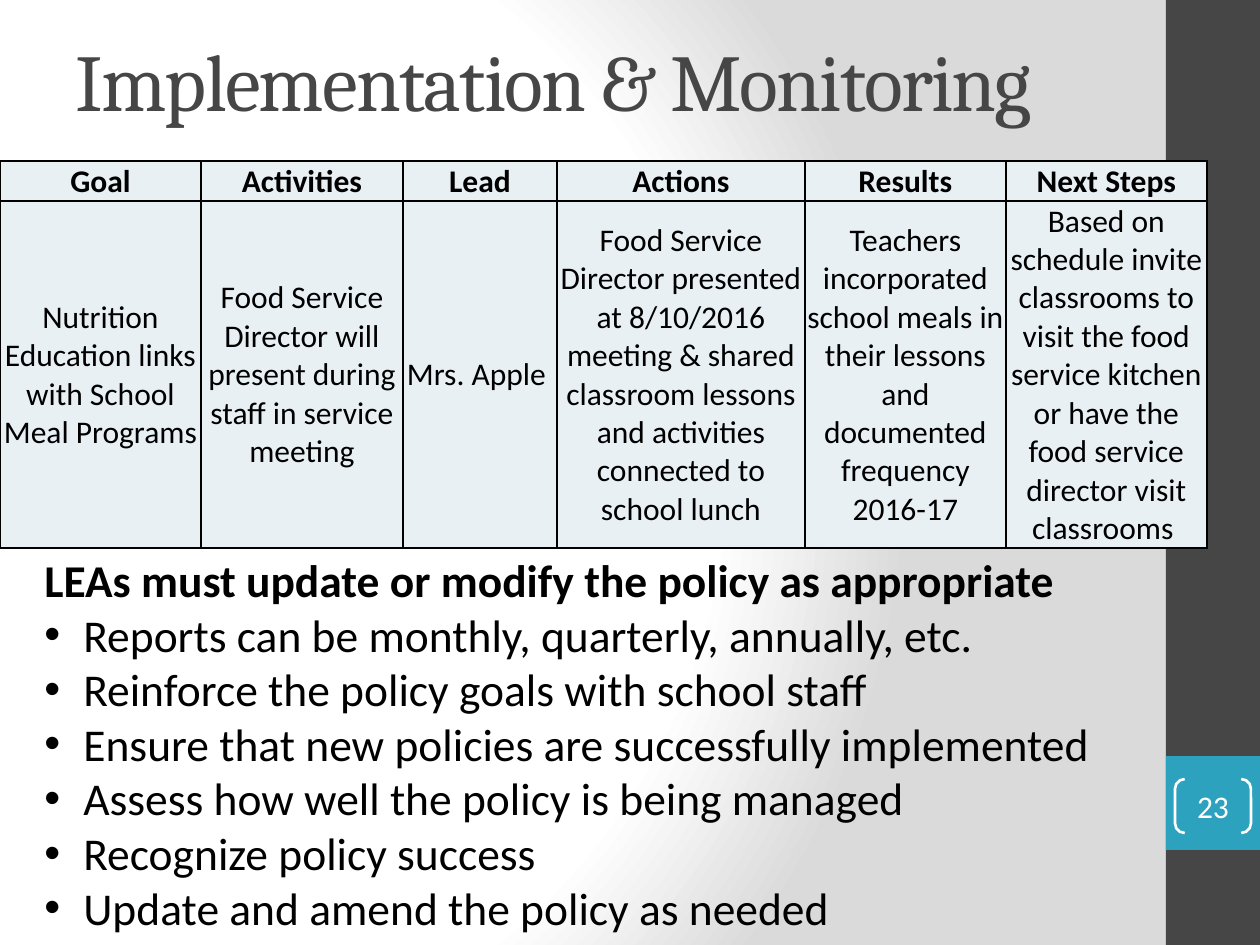
from lxml import etree
from pptx import Presentation
from pptx.dml.color import RGBColor
from pptx.enum.shapes import MSO_SHAPE as Shape
from pptx.enum.text import MSO_ANCHOR as Anchor, PP_ALIGN as Align
from pptx.oxml import parse_xml
from pptx.oxml.ns import nsdecls, qn
from pptx.util import Emu, Pt

EMU_PER_PX = 914400 / 126
BLACK = RGBColor(0x00, 0x00, 0x00)
WHITE = RGBColor(0xFF, 0xFF, 0xFF)
CHARCOAL = RGBColor(0x46, 0x46, 0x46)
TEAL = RGBColor(0x2D, 0xA2, 0xBF)
PALE_BLUE = RGBColor(0xE8, 0xF0, 0xF4)

COLUMN_WIDTHS = [201, 202, 154, 248, 201, 201]
ROW_HEIGHTS = [40, 347]
PLAN = [
    ["Goal", "Activities", "Lead", "Actions", "Results", "Next Steps"],
    [
        "Nutrition Education links with School Meal Programs",
        "Food Service Director will present during staff in service meeting",
        "Mrs. Apple ",
        "Food Service Director presented at 8/10/2016 meeting & shared "
        "classroom lessons and activities connected to school lunch",
        "Teachers incorporated school meals in their lessons and "
        "documented frequency 2016-17",
        "Based on schedule invite classrooms to visit the food service kitchen "
        "or have the food service director visit classrooms ",
    ],
]
POLICY_HEADING = "LEAs must update or modify the policy as appropriate"
POLICY_STEPS = [
    "Reports can be monthly, quarterly, annually, etc.",
    "Reinforce the policy goals with school staff",
    "Ensure that new policies are successfully implemented",
    "Assess how well the policy is being managed",
    "Recognize policy success",
    "Update and amend the policy as needed",
]


def px(length):
    """Turn pixels into EMU."""
    return Emu(round(length * EMU_PER_PX))


def box_px(*lengths):
    """Turn a left, top, width, height box into EMU."""
    return [px(length) for length in lengths]


def write(paragraph, words, size, color=BLACK, bold=False, face="Calibri"):
    """Set the words of a paragraph and format them."""
    paragraph.text = words
    for run in paragraph.runs:
        run.font.name = face
        run.font.size = Pt(size)
        run.font.bold = bold
        run.font.color.rgb = color


def set_insets(holder, left, top, right, bottom):
    """Set the inner margins of a text frame or table cell."""
    holder.margin_left, holder.margin_top = px(left), px(top)
    holder.margin_right, holder.margin_bottom = px(right), px(bottom)


def paint_background(slide):
    """Fill the slide with a radial white to grey gradient."""
    slide.element.cSld.insert(0, parse_xml(
        f'<p:bg {nsdecls("p", "a")}><p:bgPr><a:gradFill rotWithShape="1"><a:gsLst>'
        '<a:gs pos="0"><a:srgbClr val="FFFFFF"/></a:gs>'
        '<a:gs pos="75000"><a:srgbClr val="FFFFFF"/></a:gs>'
        '<a:gs pos="100000"><a:srgbClr val="DADADA"/></a:gs></a:gsLst>'
        '<a:path path="circle"><a:fillToRect l="20000" t="50000" r="100000" b="50000"/>'
        '</a:path></a:gradFill><a:effectLst/></p:bgPr></p:bg>'))


def add_block(slide, left, top, width, height, color):
    """Add a plain filled rectangle."""
    block = slide.shapes.add_shape(Shape.RECTANGLE, *box_px(left, top, width, height))
    block.shadow.inherit = False
    block.fill.solid()
    block.fill.fore_color.rgb = color
    block.line.fill.background()


def add_sidebar(slide, left, top, width, height):
    """Add the dark side band with its teal square."""
    add_block(slide, left, top, width, height, CHARCOAL)
    add_block(slide, left, top + 756, width, width, TEAL)


def add_page_number(slide, left, top, width, height):
    """Add the bracketed page number."""
    brackets = slide.shapes.add_shape(Shape.DOUBLE_BRACKET, *box_px(left, top, width, height))
    brackets.shadow.inherit = False
    brackets.adjustments[0] = 0.18
    brackets.fill.background()
    brackets.line.color.rgb = WHITE
    brackets.line.width = Pt(1.5)
    frame = brackets.text_frame
    frame.vertical_anchor = Anchor.MIDDLE
    set_insets(frame, 0, 0, 0, 0)
    number = frame.paragraphs[0]
    write(number, "23", 18, WHITE)
    number.alignment = Align.CENTER


def add_title(slide, left, top, width, height):
    """Add the slide title with tightened letters."""
    frame = slide.shapes.add_textbox(*box_px(left, top, width, height)).text_frame
    frame.word_wrap = True
    frame.vertical_anchor = Anchor.MIDDLE
    title = frame.paragraphs[0]
    write(title, "Implementation & Monitoring", 46, CHARCOAL, face="Cambria")
    title.runs[0].font._element.set("spc", "-100")


def add_borders(cell):
    """Draw a thin black border on each side of a cell."""
    properties = cell._tc.get_or_add_tcPr()
    for position, side in enumerate(["lnL", "lnR", "lnT", "lnB"]):
        properties.insert(position, parse_xml(
            f'<a:{side} {nsdecls("a")} w="12700"><a:solidFill>'
            f'<a:srgbClr val="{BLACK}"/></a:solidFill></a:{side}>'))


def add_plan_table(slide, left, top):
    """Add the table of the goal and its follow-up."""
    box = box_px(left, top, sum(COLUMN_WIDTHS), sum(ROW_HEIGHTS))
    table = slide.shapes.add_table(len(PLAN), len(COLUMN_WIDTHS), *box).table
    table.horz_banding = False
    for column, width in zip(table.columns, COLUMN_WIDTHS):
        column.width = px(width)
    for index, (row, height) in enumerate(zip(table.rows, ROW_HEIGHTS)):
        row.height = px(height)
        for cell, words in zip(row.cells, PLAN[index]):
            cell.fill.solid()
            cell.fill.fore_color.rgb = PALE_BLUE
            cell.vertical_anchor = Anchor.MIDDLE
            set_insets(cell, 1, 1, 1, 0)
            entry = cell.text_frame.paragraphs[0]
            write(entry, words, 18, bold=index == 0)
            entry.alignment = Align.CENTER
            add_borders(cell)


def add_bullet(paragraph, indent):
    """Give a paragraph a bullet with a hanging indent."""
    properties = paragraph._p.get_or_add_pPr()
    properties.set("marL", str(px(indent)))
    properties.set("indent", str(-px(indent)))
    etree.SubElement(properties, qn("a:buFont"), typeface="Arial")
    etree.SubElement(properties, qn("a:buChar"), char="•")


def add_policy_list(slide, left, top, width, height):
    """Add the policy heading and its bulleted steps."""
    frame = slide.shapes.add_textbox(*box_px(left, top, width, height)).text_frame
    frame.word_wrap = True
    write(frame.paragraphs[0], POLICY_HEADING, 26, bold=True)
    for words in POLICY_STEPS:
        step = frame.add_paragraph()
        write(step, words, 26)
        add_bullet(step, 39)


def main():
    """Build and save the slide."""
    deck = Presentation()
    deck.slide_width, deck.slide_height = px(1260), px(945)
    slide = deck.slides.add_slide(deck.slide_layouts[6])
    paint_background(slide)
    add_sidebar(slide, 1166, 0, 94, 945)
    add_title(slide, 63, 0, 1050, 158)
    add_plan_table(slide, 0, 161)
    add_page_number(slide, 1175, 779, 76, 54)
    add_policy_list(slide, 32, 546, 1124, 398)
    deck.save("out.pptx")


if __name__ == "__main__":
    main()
